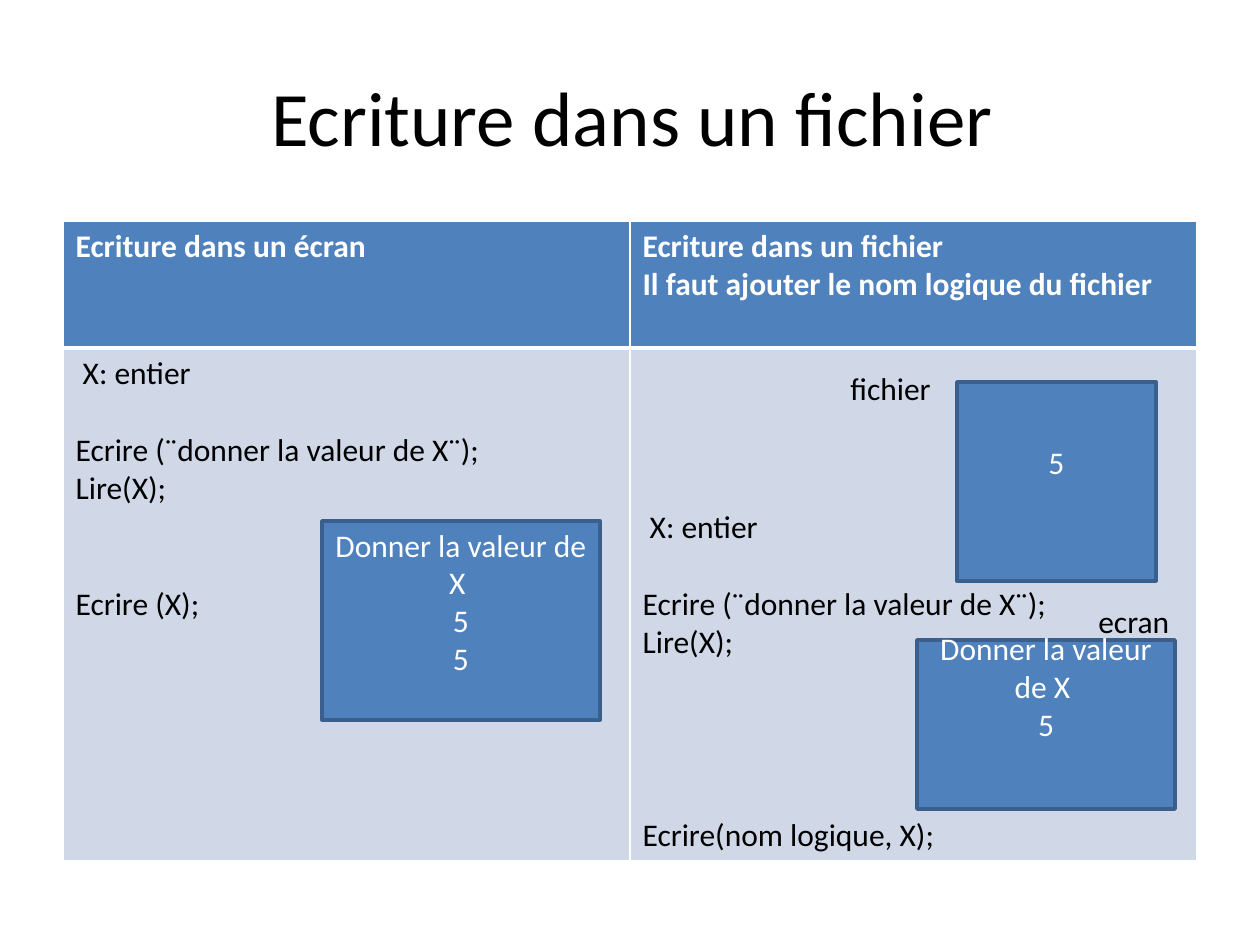
from lxml import etree
from pptx import Presentation
from pptx import util as u
from pptx.dml.color import RGBColor
from pptx.enum import shapes, text
from pptx.oxml import ns

BLACK = RGBColor(0x00, 0x00, 0x00)
WHITE = RGBColor(0xFF, 0xFF, 0xFF)
BLUE = RGBColor(0x4F, 0x81, 0xBD)
DARK_BLUE = RGBColor(0x3A, 0x5F, 0x8C)
PALE_BLUE = RGBColor(0xD0, 0xD8, 0xE8)
LINE_PT = 22  # height of one 18 pt line


def px(count):
    return u.Emu(round(count * 914400 / 126))


def write(frame, lines, color, size=18, bold=False, align=text.PP_ALIGN.LEFT):
    """Fill a text frame from (wording, empty lines above) pairs."""
    for index, (wording, gap) in enumerate(lines):
        para = frame.paragraphs[0] if index == 0 else frame.add_paragraph()
        para.alignment = align
        if gap:
            para.space_before = u.Pt(gap * LINE_PT)
        span = para.add_run()
        span.text = wording
        span.font.name = "Calibri"
        span.font.size = u.Pt(size)
        span.font.bold = bold
        span.font.color.rgb = color


deck = Presentation()
deck.slide_width, deck.slide_height = px(1260), px(945)
page = deck.slides.add_slide(deck.slide_layouts[5])

# Title
title = page.shapes.title
title.left, title.top, title.width, title.height = px(74), px(37), px(1134), px(158)
title.text_frame.vertical_anchor = text.MSO_ANCHOR.MIDDLE
write(title.text_frame, [("Ecriture dans un fichier ", 0)], BLACK, 44,
      align=text.PP_ALIGN.CENTER)

# Comparison table
table = page.shapes.add_table(2, 2, px(63), px(221), px(1134), px(639)).table
table.horz_banding = False
for row, height in zip(table.rows, (127, 512)):
    row.height = px(height)

headers = [
    [("Ecriture dans un écran", 0)],
    [("Ecriture dans un fichier", 0), ("Il faut ajouter le nom logique du fichier", 0)],
]
programs = [
    [(" X: entier", 0), ("Ecrire (¨donner la valeur de X¨);", 1), ("Lire(X);", 0),
     ("Ecrire (X);", 2)],
    [(" X: entier", 0), ("Ecrire (¨donner la valeur de X¨);", 1), ("Lire(X);", 0),
     ("Ecrire(nom logique, X);", 4)],
]
row_styles = [
    (headers, BLUE, WHITE, True, {"lnL": 1, "lnR": 1, "lnT": 1, "lnB": 3}),
    (programs, PALE_BLUE, BLACK, False, {"lnL": 1, "lnR": 1, "lnT": 3, "lnB": 1}),
]
for row_index, (contents, fill, color, bold, borders) in enumerate(row_styles):
    for column_index, lines in enumerate(contents):
        cell = table.cell(row_index, column_index)
        cell.fill.solid()
        cell.fill.fore_color.rgb = fill
        write(cell.text_frame, lines, color, bold=bold)
        properties = cell._tc.get_or_add_tcPr()
        for position, (side, points) in enumerate(borders.items()):
            border = etree.Element(ns.qn("a:" + side), w=str(u.Pt(points)))
            solid = etree.SubElement(border, ns.qn("a:solidFill"))
            etree.SubElement(solid, ns.qn("a:srgbClr"), val=str(WHITE))
            properties.insert(position, border)
# The file program starts four lines lower
table.cell(1, 1).margin_top = u.Pt(3.6 + 4 * LINE_PT)

# Screens and file: frame, lines, empty lines kept free below
boxes = [
    ((322, 521, 278, 199), ["Donner la valeur de X ", "5", "5"], 1),
    ((957, 382, 199, 199), ["5"], 1),
    ((917, 640, 258, 169), ["Donner la valeur de X ", "5"], 2),
]
for frame, lines, free_lines in boxes:
    box = page.shapes.add_shape(shapes.MSO_SHAPE.RECTANGLE, *map(px, frame))
    box.shadow.inherit = False
    box.fill.solid()
    box.fill.fore_color.rgb = BLUE
    box.line.color.rgb = DARK_BLUE
    box.line.width = u.Pt(2)
    box.text_frame.word_wrap = True
    box.text_frame.vertical_anchor = text.MSO_ANCHOR.MIDDLE
    box.text_frame.margin_bottom = u.Pt(3.6 + free_lines * LINE_PT)
    write(box.text_frame, [(line, 0) for line in lines], WHITE,
          align=text.PP_ALIGN.CENTER)

# Labels
for wording, left, top in [("fichier", 838, 363), ("ecran", 1086, 596)]:
    label = page.shapes.add_textbox(px(left), px(top), px(139), px(50))
    label.text_frame.word_wrap = True
    write(label.text_frame, [(wording, 0)], BLACK)

deck.save("out.pptx")
